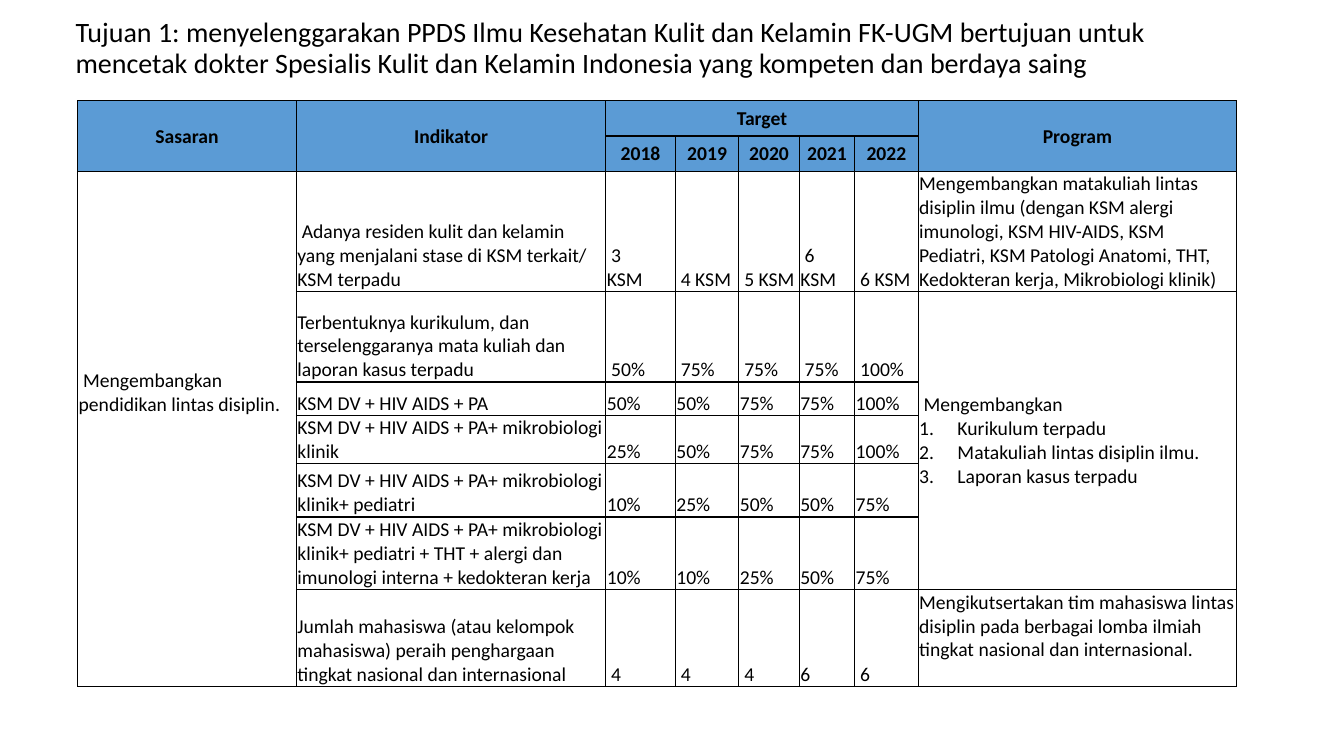
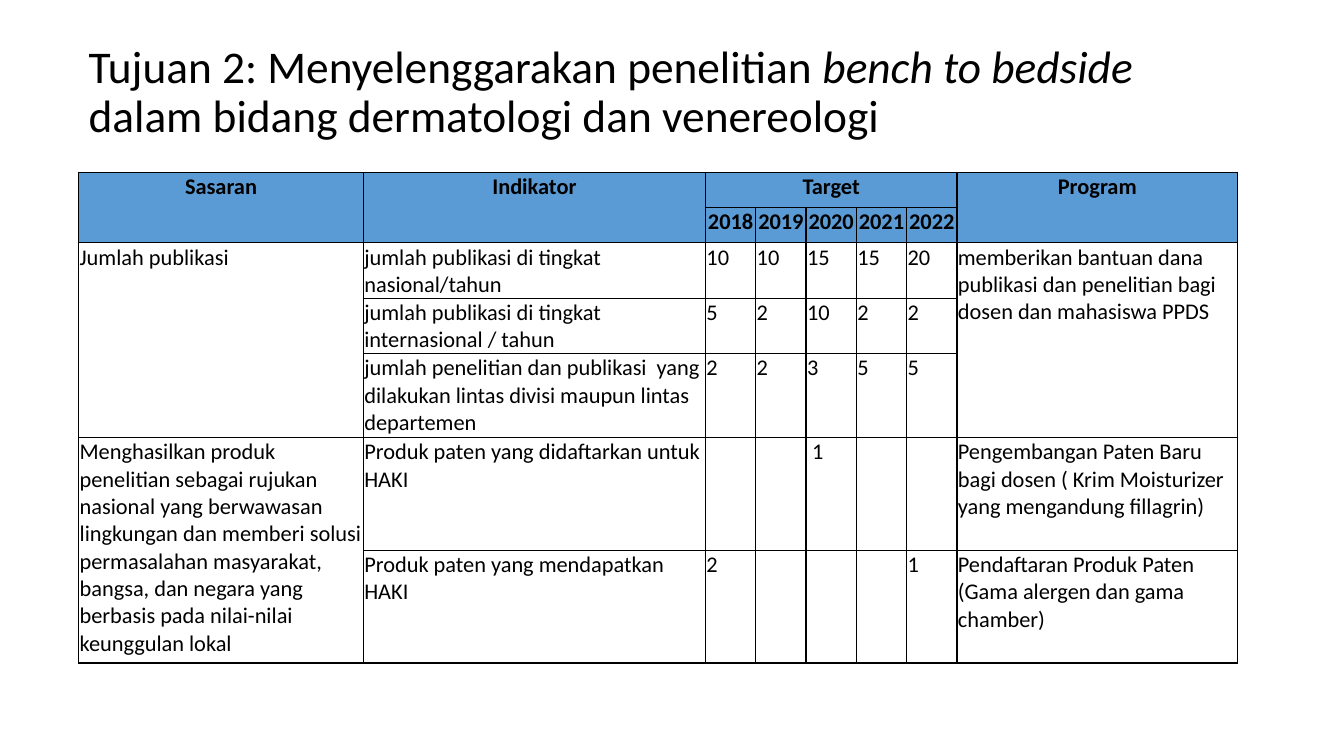
from lxml.etree import SubElement
from pptx import Presentation
from pptx.dml.color import RGBColor
from pptx.enum.text import MSO_ANCHOR as ANCHOR, PP_ALIGN as ALIGN
from pptx.oxml.ns import qn
from pptx.util import Inches, Pt

SLIDE_W, SLIDE_H = 13.33, 7.5
FONT = "Calibri"
COLORS = {"text": "000000", "border": "000000", "header": "5B9BD5", "body": "FFFFFF"}
CONTENT_WIDTH = 86.25
HEADER_ROWS = 2
YEARS = ["2018", "2019", "2020", "2021", "2022"]
HEADER = [
    ["Sasaran", "Indikator", "Target", "", "", "", "", "Program"],
    ["", "", *YEARS, ""],
]
HEADER_SPANS = [(0, 0, 2, 1), (0, 1, 2, 1), (0, 2, 1, 5), (0, 7, 2, 1)]

EDUCATION_ROWS = [
    [" Mengembangkan pendidikan lintas disiplin.",
     " Adanya residen kulit dan kelamin yang menjalani stase di KSM terkait/ KSM terpadu",
     " 3\nKSM", " 4 KSM", " 5 KSM", " 6 KSM", " 6 KSM",
     "Mengembangkan matakuliah lintas disiplin ilmu (dengan KSM alergi imunologi, "
     "KSM HIV-AIDS, KSM Pediatri, KSM Patologi Anatomi, THT, Kedokteran kerja, "
     "Mikrobiologi klinik)"],
    ["", "Terbentuknya kurikulum, dan terselenggaranya mata kuliah dan laporan kasus terpadu",
     " 50%", " 75%", " 75%", " 75%", " 100%", " Mengembangkan"],
    ["", "KSM DV + HIV AIDS + PA", "50%", "50%", "75%", "75%", "100%", ""],
    ["", "KSM DV + HIV AIDS + PA+ mikrobiologi klinik",
     "25%", "50%", "75%", "75%", "100%", ""],
    ["", "KSM DV + HIV AIDS + PA+ mikrobiologi klinik+ pediatri",
     "10%", "25%", "50%", "50%", "75%", ""],
    ["", "KSM DV + HIV AIDS + PA+ mikrobiologi klinik+ pediatri + THT + alergi dan "
     "imunologi interna + kedokteran kerja", "10%", "10%", "25%", "50%", "75%", ""],
    ["", "Jumlah mahasiswa (atau kelompok mahasiswa) peraih penghargaan tingkat "
     "nasional dan internasional", " 4", " 4", " 4", "6", " 6",
     "Mengikutsertakan tim mahasiswa lintas disiplin pada berbagai lomba ilmiah "
     "tingkat nasional dan internasional."],
]
CURRICULUM_PROGRAMS = [
    "Kurikulum terpadu", "Matakuliah lintas disiplin ilmu.", "Laporan kasus terpadu",
]
RESEARCH_ROWS = [
    ["Jumlah publikasi", "jumlah publikasi di tingkat nasional/tahun",
     "10", "10", "15", "15", "20",
     "memberikan bantuan dana publikasi dan penelitian bagi dosen dan mahasiswa PPDS"],
    ["", "jumlah publikasi di tingkat internasional / tahun", "5", "2", "10", "2", "2", ""],
    ["", "jumlah penelitian dan publikasi  yang dilakukan lintas divisi maupun lintas "
     "departemen", "2", "2", "3", "5", "5", ""],
    ["Menghasilkan produk penelitian sebagai rujukan nasional yang berwawasan "
     "lingkungan dan memberi solusi permasalahan masyarakat, bangsa, dan negara yang "
     "berbasis pada nilai-nilai keunggulan lokal",
     "Produk paten yang didaftarkan untuk HAKI", "", "", " 1", "", "",
     "Pengembangan Paten Baru bagi dosen ( Krim Moisturizer yang mengandung fillagrin)"],
    ["", "Produk paten yang mendapatkan HAKI", "2", "", "", "", "1",
     "Pendaftaran Produk Paten (Gama alergen dan gama chamber)"],
]


def across(percent):
    return Inches(SLIDE_W * percent / 100)


def down(percent):
    return Inches(SLIDE_H * percent / 100)


def style_font(font, size, bold=False, italic=False):
    font.name, font.size, font.bold, font.italic = FONT, Pt(size), bold, italic
    font.color.rgb = RGBColor.from_string(COLORS["text"])


def add_title(slide, left, top, size, parts):
    frame = slide.shapes.add_textbox(
        across(left), down(top), across(CONTENT_WIDTH), down(9.47)).text_frame
    frame.word_wrap = True
    frame.vertical_anchor = ANCHOR.MIDDLE
    heading = frame.paragraphs[0]
    heading.line_spacing = 0.9
    for words, italic in parts:
        run = heading.add_run()
        run.text = words
        style_font(run.font, size, italic=italic)


def add_borders(cell):
    properties = cell._tc.get_or_add_tcPr()
    for side in ("a:lnL", "a:lnR", "a:lnT", "a:lnB"):
        line = SubElement(properties, qn(side), w=str(Pt(1)))
        fill = SubElement(line, qn("a:solidFill"))
        SubElement(fill, qn("a:srgbClr"), val=COLORS["border"])


def style_cell(cell, is_header, anchor):
    add_borders(cell)
    cell.fill.solid()
    cell.fill.fore_color.rgb = RGBColor.from_string(COLORS["header" if is_header else "body"])
    cell.margin_left = cell.margin_right = cell.margin_top = Inches(0.01)
    cell.margin_bottom = 0
    cell.vertical_anchor = anchor


def write_cell(cell, text, size, is_header):
    cell.text_frame.text = text
    for paragraph in cell.text_frame.paragraphs:
        paragraph.alignment = ALIGN.CENTER if is_header else ALIGN.LEFT
        for run in paragraph.runs:
            style_font(run.font, size, bold=is_header)


def add_target_table(slide, left, top, height, columns, rows, body, spans, size, anchors):
    content = HEADER + body
    table = slide.shapes.add_table(
        len(rows), len(columns), across(left), down(top),
        across(CONTENT_WIDTH), down(height)).table
    table.first_row = table.horz_banding = False
    for column, share in zip(table.columns, columns):
        column.width = across(CONTENT_WIDTH * share / sum(columns))
    for row, share in zip(table.rows, rows):
        row.height = down(height * share / sum(rows))
    for r, c, tall, wide in HEADER_SPANS + spans:
        table.cell(r, c).merge(table.cell(r + tall - 1, c + wide - 1))
    for r, texts in enumerate(content):
        is_header = r < HEADER_ROWS
        for c, text in enumerate(texts):
            cell = table.cell(r, c)
            style_cell(cell, is_header, anchors[0 if is_header else 1])
            if text:
                write_cell(cell, text, size, is_header)
    return table


def add_numbered_items(cell, items, size):
    for item in items:
        paragraph = cell.text_frame.add_paragraph()
        paragraph.text = item
        properties = paragraph._p.get_or_add_pPr()
        properties.set("marL", str(Inches(0.38)))
        properties.set("indent", str(-Inches(0.38)))
        SubElement(properties, qn("a:buFont"), typeface="+mj-lt")
        SubElement(properties, qn("a:buAutoNum"), type="arabicPeriod")
        style_font(paragraph.runs[0].font, size)


def add_education_slide(slide):
    add_title(slide, 4.88, 1.73, 20, [
        ("Tujuan 1: menyelenggarakan PPDS Ilmu Kesehatan Kulit dan Kelamin FK-UGM "
         "bertujuan untuk mencetak dokter Spesialis Kulit dan Kelamin Indonesia yang "
         "kompeten dan berdaya saing", False)])
    table = add_target_table(
        slide, 5.78, 13.33, 77.47,
        [2.17, 3.07, 0.69, 0.63, 0.6, 0.55, 0.63, 3.16],
        [0.35, 0.35, 1.19, 0.9, 0.33, 0.48, 0.53, 0.72, 0.96],
        EDUCATION_ROWS, [(2, 0, 7, 1), (3, 7, 5, 1)], 14, (ANCHOR.MIDDLE, ANCHOR.BOTTOM))
    goal, curriculum, competition = table.cell(2, 0), table.cell(3, 7), table.cell(8, 7)
    goal.vertical_anchor = curriculum.vertical_anchor = ANCHOR.MIDDLE
    goal.margin_bottom = Inches(0.72)
    competition.vertical_anchor = ANCHOR.TOP
    add_numbered_items(curriculum, CURRICULUM_PROGRAMS, 14)


def add_research_slide(slide):
    add_title(slide, 5.85, 7.6, 32.4, [
        ("Tujuan 2: Menyelenggarakan penelitian ", False),
        ("bench to bedside ", True),
        ("dalam bidang dermatologi dan venereologi", False)])
    add_target_table(
        slide, 5.85, 22.8, 64.93,
        [2.83, 3.4, *[0.5] * len(YEARS), 2.79],
        [0.35, 0.35, 0.55, 0.55, 0.83, 1.12, 1.12],
        RESEARCH_ROWS, [(2, 0, 3, 1), (2, 7, 3, 1), (5, 0, 2, 1)], 16,
        (ANCHOR.TOP, ANCHOR.TOP))


def main():
    deck = Presentation()
    deck.slide_width, deck.slide_height = Inches(SLIDE_W), Inches(SLIDE_H)
    blank = deck.slide_layouts[6]
    for build in (add_education_slide, add_research_slide):
        build(deck.slides.add_slide(blank))
    deck.save("out.pptx")


if __name__ == "__main__":
    main()
